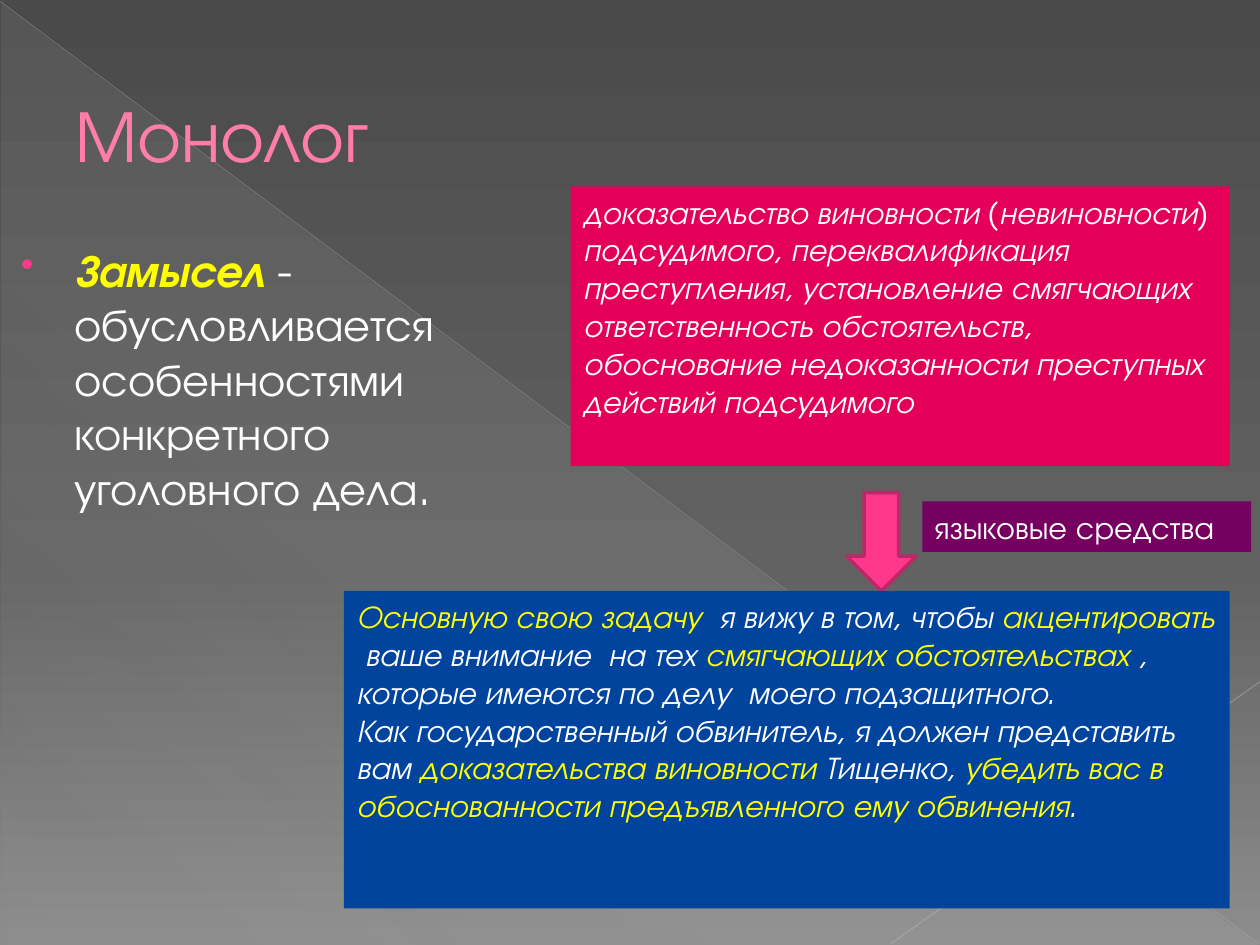
from lxml import etree
from pptx import Presentation
from pptx.dml.color import RGBColor
from pptx.enum import shapes, text
from pptx.oxml import ns
from pptx.util import Inches, Pt

FONT = "TeX Gyre Adventor"
WHITE = RGBColor(0xFF, 0xFF, 0xFF)
YELLOW = RGBColor(0xFF, 0xFF, 0x00)
ROSE = RGBColor(0xFF, 0x7D, 0xA7)
PINK = RGBColor(0xFF, 0x38, 0x8C)
DARK_PINK = RGBColor(0xBD, 0x29, 0x68)
CRIMSON = RGBColor(0xE4, 0x00, 0x59)
PURPLE = RGBColor(0x75, 0x00, 0x5F)
BLUE = RGBColor(0x00, 0x44, 0x9E)
GREY = RGBColor(0xD2, 0xD2, 0xD2)
LINE_1 = RGBColor(0xBF, 0xBF, 0xBF)
LINE_2 = RGBColor(0xC6, 0xC6, 0xC6)
BACK = [(0, RGBColor(0x4A, 0x4A, 0x4A), 100),
        (60, RGBColor(0x62, 0x62, 0x62), 100),
        (100, RGBColor(0x8C, 0x8C, 0x8C), 100)]


def set_gradient(fill, owner, stops, angle):
    """Fill with (position %, colour, opacity %) stops, angle clockwise."""
    fill.gradient()
    fill.gradient_angle = 360 - angle
    lst = owner.find(".//" + ns.qn("a:gsLst"))
    for gs in list(lst):
        lst.remove(gs)
    for pos, color, alpha in stops:
        gs = etree.SubElement(lst, ns.qn("a:gs"), pos=str(pos * 1000))
        clr = etree.SubElement(gs, ns.qn("a:srgbClr"), val=str(color))
        etree.SubElement(clr, ns.qn("a:alpha"), val=str(alpha * 1000))


def add_runs(p, runs, size):
    """Add (text, colour, bold, italic) runs to a paragraph."""
    p.alignment = text.PP_ALIGN.LEFT
    for words, color, bold, italic in runs:
        r = p.add_run()
        r.text = words
        r.font.name, r.font.size = FONT, Pt(size)
        r.font.bold, r.font.italic = bold, italic
        r.font.color.rgb = color


prs = Presentation()
prs.slide_width, prs.slide_height = Inches(10), Inches(7.5)
s = prs.slides.add_slide(prs.slide_layouts[6])

# Background with a faint triangle and two thin lines
set_gradient(s.background.fill, s._element, BACK, 90)
sp = s.shapes.add_shape(shapes.MSO_SHAPE.RIGHT_TRIANGLE,
                        Inches(0.01), Inches(0.02), Inches(9.98), Inches(7.48))
sp.shadow.inherit = False
sp.line.fill.background()
set_gradient(sp.fill, sp._element,
             [(0, GREY, 10), (70, GREY, 8), (100, GREY, 1)], 133)

for x1, y1, x2, y2, color, width, alpha in [
        (0, 0.01, 9.99, 7.49, LINE_1, 0.39, 35),
        (10, 5.41, 7.07, 7.49, LINE_2, 0.47, 45)]:
    ln = s.shapes.add_connector(shapes.MSO_CONNECTOR.STRAIGHT,
                                Inches(x1), Inches(y1), Inches(x2), Inches(y2))
    ln.line.color.rgb, ln.line.width = color, Pt(width)
    clr = ln._element.spPr.find(".//" + ns.qn("a:srgbClr"))
    etree.SubElement(clr, ns.qn("a:alpha"), val=str(alpha * 1000))
    etree.SubElement(ln._element.spPr, ns.qn("a:effectLst"))

# Title
tb = s.shapes.add_textbox(Inches(0.5), Inches(0.29), Inches(9), Inches(1.53))
tf = tb.text_frame
tf.word_wrap = True
tf.vertical_anchor = text.MSO_ANCHOR.MIDDLE
add_runs(tf.paragraphs[0], [("Монолог", ROSE, False, False)], 42)

# Bulleted definition
tb = s.shapes.add_textbox(Inches(0), Inches(1.87), Inches(4.42), Inches(2.57))
tf = tb.text_frame
tf.word_wrap = True
p = tf.paragraphs[0]
add_runs(p, [("Замысел", YELLOW, True, True),
             (" - обусловливается особенностями конкретного уголовного дела.",
              WHITE, False, False)], 26)
p.space_before = Pt(5)
pPr = p._p.get_or_add_pPr()
pPr.set("marL", str(Inches(0.49)))
pPr.set("indent", str(Inches(-0.42)))
bu = etree.SubElement(pPr, ns.qn("a:buClr"))
etree.SubElement(bu, ns.qn("a:srgbClr"), val=str(PINK))
etree.SubElement(pPr, ns.qn("a:buSzPct"), val="80000")
etree.SubElement(pPr, ns.qn("a:buChar"), char="•")

# Arrow from the aims to the speech
sp = s.shapes.add_shape(shapes.MSO_SHAPE.DOWN_ARROW,
                        Inches(6.72), Inches(3.91), Inches(0.55), Inches(0.78))
sp.shadow.inherit = False
sp.fill.solid()
sp.fill.fore_color.rgb = PINK
sp.line.color.rgb, sp.line.width = DARK_PINK, Pt(2)

# Coloured boxes: aims, label, speech
aims = [[("доказательство виновности (невиновности) подсудимого, "
          "переквалификация преступления, установление смягчающих "
          "ответственность обстоятельств, обоснование недоказанности "
          "преступных действий подсудимого", WHITE, False, True)]]
label = [[("языковые средства", WHITE, False, False)]]
speech = [
    [("Основную свою задачу  ", YELLOW, False, True),
     ("я вижу в том, чтобы ", WHITE, False, True),
     ("акцентировать  ", YELLOW, False, True),
     ("ваше внимание  на тех ", WHITE, False, True),
     ("смягчающих обстоятельствах ", YELLOW, False, True),
     (", которые имеются по делу  моего подзащитного.", WHITE, False, True)],
    [("Как государственный обвинитель, я должен представить вам ",
      WHITE, False, True),
     ("доказательства виновности ", YELLOW, False, True),
     ("Тищенко, ", WHITE, False, True),
     ("убедить вас в обоснованности предъявленного ему обвинения",
      YELLOW, False, True),
     (".", WHITE, False, True)],
]
for x, y, w, h, color, paragraphs in [
        (4.53, 1.48, 5.23, 2.22, CRIMSON, aims),
        (7.32, 3.98, 2.61, 0.4, PURPLE, label),
        (2.73, 4.69, 7.03, 2.52, BLUE, speech)]:
    sp = s.shapes.add_shape(shapes.MSO_SHAPE.RECTANGLE,
                            Inches(x), Inches(y), Inches(w), Inches(h))
    sp.shadow.inherit = False
    sp.fill.solid()
    sp.fill.fore_color.rgb = color
    sp.line.fill.background()
    tf = sp.text_frame
    tf.word_wrap = True
    tf.vertical_anchor = text.MSO_ANCHOR.TOP
    for i, runs in enumerate(paragraphs):
        p = tf.add_paragraph() if i else tf.paragraphs[0]
        add_runs(p, runs, 18)

prs.save("out.pptx")
